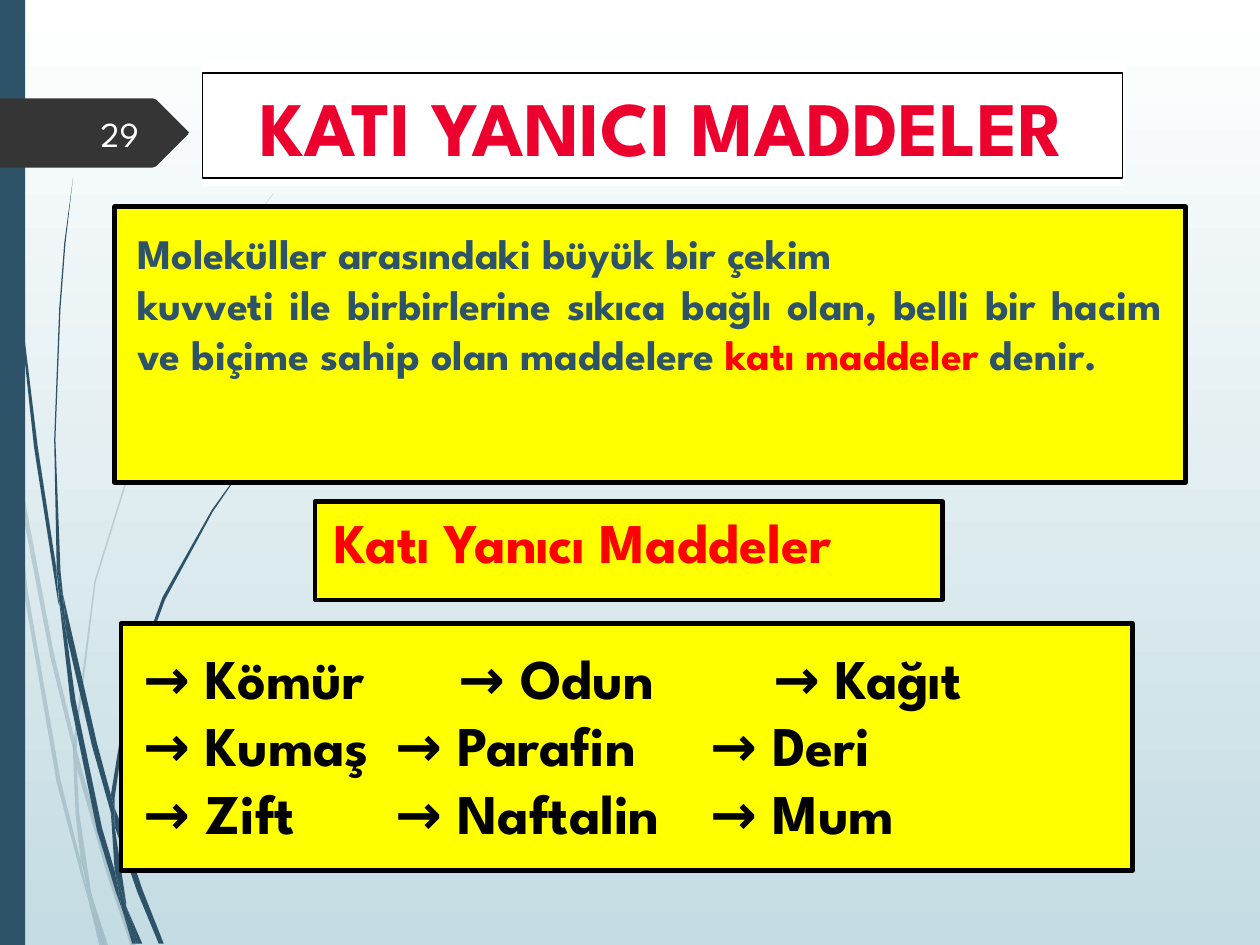
from pptx import Presentation
from pptx import util as u
from pptx.dml.color import RGBColor
from pptx.enum import text
from pptx.enum.shapes import MSO_SHAPE
from pptx.oxml.xmlchemy import OxmlElement

PX = u.Inches(1) // 100  # one px is a hundredth of an inch
FONT = "League Spartan"
WHITE = RGBColor(0xFF, 0xFF, 0xFF)
PALE = RGBColor(0xC4, 0xDC, 0xE3)
TEAL = RGBColor(0x2E, 0x53, 0x69)
GRAPHITE = RGBColor(0x35, 0x35, 0x35)
BLACK = RGBColor(0, 0, 0)
YELLOW = RGBColor(0xFF, 0xFF, 0)
RED = RGBColor(0xFF, 0, 0)
CRIMSON = RGBColor(0xEC, 0, 0x2D)
NUMBER_WHITE = RGBColor(0xFE, 0xFF, 0xFF)

LEFT, CENTER = text.PP_ALIGN.LEFT, text.PP_ALIGN.CENTER
RIGHT, JUSTIFY = text.PP_ALIGN.RIGHT, text.PP_ALIGN.JUSTIFY

# Outlines of the grass blades, pale ones behind and dark ones in front
PALE_BLADES = [
    [(8, 350), (6, 322), (0, 282), (0, 299), (7, 344)],
    [(40, 522), (59, 599), (59, 586), (43, 520), (10, 345), (12, 376)],
    [(64, 607), (61, 596), (61, 610), (85, 694), (104, 751), (108, 751), (88, 692)],
    [(83, 751), (86, 751), (73, 711)],
    [(64, 683), (48, 619), (22, 469), (12, 376), (8, 350), (19, 470),
     (45, 621), (64, 693), (70, 714), (69, 707)],
    [(58, 599), (60, 646), (64, 683), (67, 692), (73, 711), (72, 706),
     (63, 646), (61, 610), (61, 608)],
    [(61, 584), (76, 462), (111, 349), (159, 245), (187, 198), (201, 175),
     (217, 154), (217, 153), (201, 175), (186, 197), (158, 244), (110, 348),
     (75, 461), (59, 584), (59, 586), (61, 596)],
    [(70, 714), (79, 751), (82, 751)],
    [(61, 608), (61, 610), (61, 596), (59, 586), (58, 599)],
    [(67, 692), (65, 683), (69, 707), (70, 714), (82, 751), (83, 751), (73, 711)],
]
DARK_BLADES = [
    [(5, 110), (14, 233), (27, 355), (46, 477), (47, 481), (45, 457), (45, 453),
     (30, 355), (15, 232), (6, 109), (4, 48), (3, 0), (2, 0), (3, 48)],
    [(73, 592), (88, 645), (88, 633), (88, 631), (77, 590), (50, 472), (53, 505)],
    [(94, 649), (91, 641), (91, 656), (109, 708), (126, 749), (130, 749), (113, 706)],
    [(91, 691), (81, 657), (60, 556), (53, 505), (47, 477), (56, 557),
     (77, 659), (92, 708), (97, 722), (96, 717)],
    [(50, 472), (48, 453), (44, 349), (48, 245), (52, 193), (58, 141),
     (51, 193), (47, 245), (43, 349), (45, 449), (49, 472)],
    [(110, 749), (113, 749), (100, 719)],
    [(47, 477), (53, 505), (50, 472), (49, 472), (45, 449), (45, 453)],
    [(91, 633), (103, 552), (131, 476), (169, 406), (191, 374), (203, 359),
     (216, 344), (215, 344), (203, 358), (191, 373), (168, 405), (129, 474),
     (101, 551), (88, 631), (91, 641)],
    [(97, 722), (105, 749), (108, 749)],
    [(88, 645), (91, 691), (96, 706), (100, 719), (100, 716), (91, 656), (90, 651)],
    [(88, 645), (90, 651), (91, 656), (91, 641), (88, 631), (88, 633)],
    [(96, 706), (91, 691), (96, 717), (97, 722), (108, 749), (110, 749), (100, 719)],
]
NUMBER_TAG = [(0, 78), (121, 78), (124, 79), (149, 104), (150, 105), (149, 107),
              (124, 132), (121, 133), (0, 133)]


def px(*lengths):
    return [length * PX for length in lengths]


def add_outline(shapes, points, color, opacity=100):
    builder = shapes.build_freeform(*points[0], scale=PX)
    builder.add_line_segments(points[1:], close=True)
    outline = builder.convert_to_shape()
    outline.shadow.inherit = False
    outline.fill.solid()
    outline.fill.fore_color.rgb = color
    outline.line.fill.background()
    if opacity < 100:
        alpha = OxmlElement("a:alpha")
        alpha.set("val", str(opacity * 1000))
        outline.element.spPr.find(".//{*}srgbClr").append(alpha)


def add_blades(page, blades, opacity):
    group = page.shapes.add_group_shape()
    for points in blades:
        add_outline(group.shapes, points, TEAL, opacity)


def add_panel(page, place, fill, line=None, width=2.5):
    panel = page.shapes.add_shape(MSO_SHAPE.RECTANGLE, *px(*place))
    panel.shadow.inherit = False
    panel.fill.solid()
    panel.fill.fore_color.rgb = fill
    if line is None:
        panel.line.fill.background()
    else:
        panel.line.color.rgb = line
        panel.line.width = u.Pt(width)


def format_span(span, size, color, bold=True):
    span.font.name = FONT
    span.font.size = u.Pt(size)
    span.font.bold = bold
    span.font.color.rgb = color


def add_text(page, place, words, size, color, align=LEFT, bold=True):
    box = page.shapes.add_textbox(*px(*place))
    frame = box.text_frame
    frame.word_wrap = True
    frame.text = words
    for para in frame.paragraphs:
        para.alignment = align
        for span in para.runs:
            format_span(span, size, color, bold)
    return frame


def place_title(page, place, words):
    title = page.shapes.title
    page.shapes.element.append(title.element)  # in front of its backing
    title.left, title.top, title.width, title.height = px(*place)
    title.fill.solid()
    title.fill.fore_color.rgb = WHITE
    title.line.color.rgb = BLACK
    title.line.width = u.Pt(0.75)
    frame = title.text_frame
    frame.text = words
    frame.word_wrap = True
    frame.auto_size = text.MSO_AUTO_SIZE.SHAPE_TO_FIT_TEXT
    frame.vertical_anchor = text.MSO_ANCHOR.TOP
    frame.paragraphs[0].alignment = CENTER
    format_span(frame.paragraphs[0].runs[0], 44, CRIMSON)


def paint_background(page):
    fill = page.background.fill
    fill.gradient()
    fill.gradient_angle = 270
    for stop, color in zip(fill.gradient_stops, (WHITE, PALE)):
        stop.color.rgb = color


def main():
    deck = Presentation()
    deck.slide_width, deck.slide_height = px(1000, 750)
    page = deck.slides.add_slide(deck.slide_layouts[5])

    # Backdrop and slide number
    paint_background(page)
    add_blades(page, PALE_BLADES, 20)
    add_blades(page, DARK_BLADES, 100)
    add_panel(page, (0, 0, 20, 750), TEAL)
    add_outline(page.shapes, NUMBER_TAG, GRAPHITE)
    number = add_text(page, (56, 86, 64, 40), "29", 20, NUMBER_WHITE, RIGHT, bold=False)
    number.vertical_anchor = text.MSO_ANCHOR.MIDDLE

    # Title
    add_panel(page, (161, 51, 730, 95), WHITE, WHITE)
    place_title(page, (161, 58, 730, 83), "KATI YANICI MADDELER")

    # Definition
    add_panel(page, (91, 164, 850, 219), YELLOW, BLACK)
    definition = add_text(
        page, (99, 176, 833, 150),
        "Moleküller arasındaki büyük bir çekim\n"
        "kuvveti ile birbirlerine sıkıca bağlı olan, belli bir hacim "
        "ve biçime sahip olan maddelere ", 24, TEAL, JUSTIFY)
    for words, color in (("katı maddeler", RED), (" denir.", TEAL)):
        span = definition.paragraphs[-1].add_run()
        span.text = words
        format_span(span, 24, color)

    # Subheading
    add_panel(page, (250, 398, 498, 78), YELLOW, BLACK)
    add_text(page, (256, 398, 488, 64), "Katı Yanıcı Maddeler", 32, RED)

    # Examples, lined up on the default tab stops
    add_panel(page, (96, 495, 803, 196), YELLOW, BLACK)
    add_text(page, (104, 506, 787, 170),
             "→ Kömür\t\t→ Odun \t\t→ Kağıt \n"
             "→ Kumaş \t→ Parafin \t→ Deri \n"
             "→ Zift \t\t→ Naftalin \t→ Mum", 32, BLACK, JUSTIFY)

    deck.save("out.pptx")


if __name__ == "__main__":
    main()
